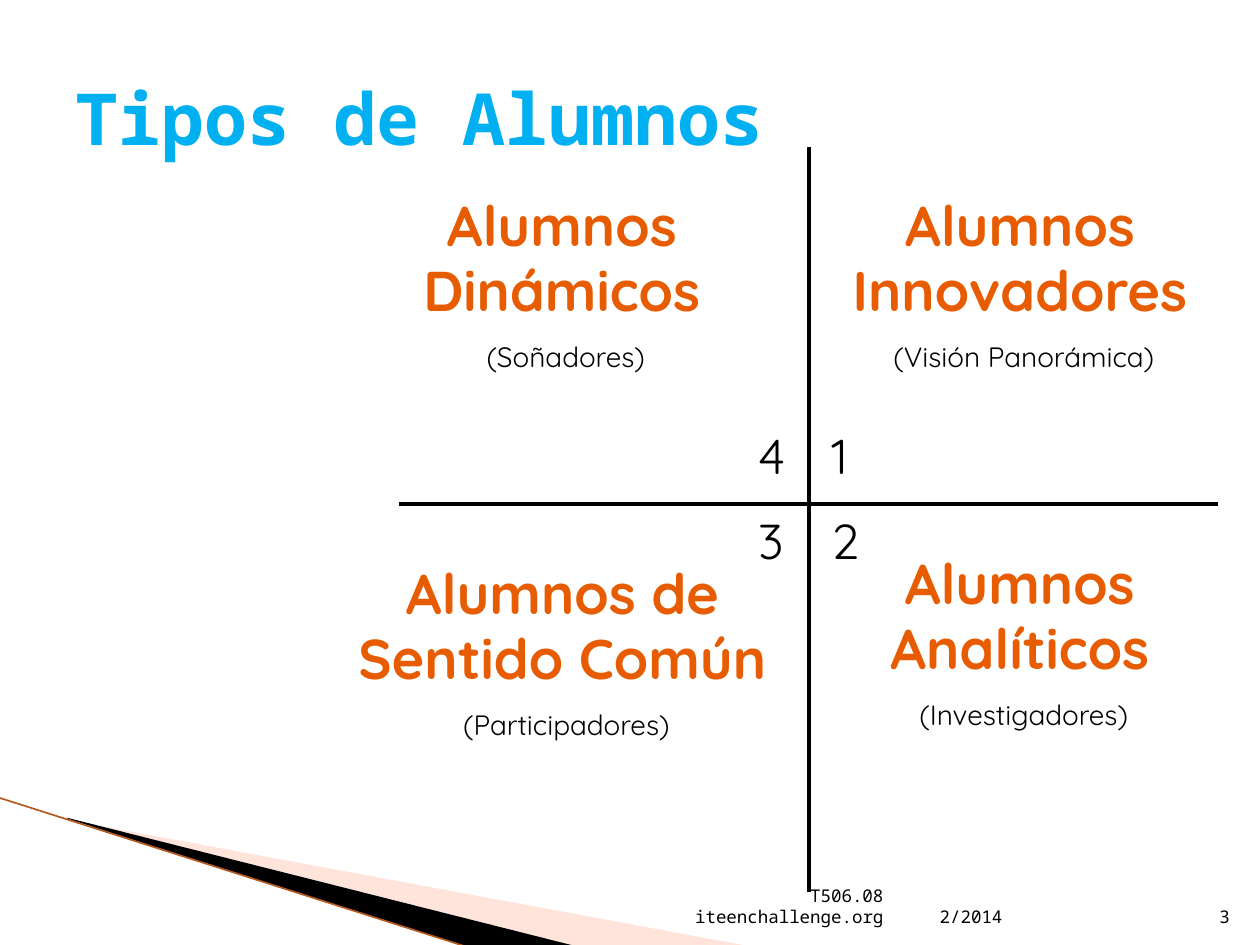
import pptx
import pptx.util
import pptx.dml.color
import pptx.enum.shapes
import pptx.enum.text
import pptx.oxml
import pptx.oxml.ns
from lxml import etree

Pt = pptx.util.Pt
RGB = pptx.dml.color.RGBColor
ALIGN = pptx.enum.text.PP_ALIGN
ANCHOR = pptx.enum.text.MSO_ANCHOR
qn = pptx.oxml.ns.qn

BLACK = RGB(0, 0, 0)
BLUE = RGB(0x00, 0xB0, 0xF0)
ORANGE = RGB(0xE7, 0x5C, 0x01)
PEACH = RGB(0xFF, 0xBC, 0xA5)
RUST = RGB(0xB5, 0x5A, 0x1E)
MONO, SANS = "Noto Sans Mono", "Quicksand"

deck = pptx.Presentation()
deck.slide_width, deck.slide_height = Pt(720), Pt(540)
slide = deck.slides.add_slide(deck.slide_layouts[6])
shapes = slide.shapes


def write(box, text, size, face=SANS, color=BLACK, bold=False, align=ALIGN.LEFT,
          anchor=ANCHOR.TOP, after=0, space=None):
    """Add one paragraph; box is a text frame or (left, top, width, height)."""
    if isinstance(box, tuple):
        frame = shapes.add_textbox(*map(Pt, box)).text_frame
        frame.word_wrap = True
        frame.vertical_anchor = anchor
        para = frame.paragraphs[0]
    else:
        frame = box
        para = frame.add_paragraph()
    para.alignment = align
    para.space_after = Pt(after)
    if space:
        para.line_spacing = space
    run = para.add_run()
    run.text = text
    run.font.name, run.font.size, run.font.bold = face, Pt(size), bold
    run.font.color.rgb = color
    return frame


def rule(start, end, color, width):
    line = shapes.add_connector(pptx.enum.shapes.MSO_CONNECTOR.STRAIGHT,
                                *map(Pt, start + end))
    line.line.color.rgb = color
    line.line.width = Pt(width)
    etree.SubElement(line._element.spPr, qn("a:effectLst"))


# Corner wedges
wedges = [
    (PEACH, 40, [(39.6, 468.7), (428.4, 540.7), (328.3, 540.7), (39.6, 468)]),
    (BLACK, 100, [(38.2, 467.3), (329, 540.7), (267.8, 541.4), (38.9, 468)]),
]
for color, opaque, points in wedges:
    spots = [(Pt(x), Pt(y)) for x, y in points]
    maker = shapes.build_freeform(*spots[0])
    maker.add_line_segments(spots[1:], close=True)
    wedge = maker.convert_to_shape()
    wedge.shadow.inherit = False
    wedge.line.fill.background()
    wedge.fill.solid()
    wedge.fill.fore_color.rgb = color
    if opaque < 100:
        tint = wedge._element.spPr.find(qn("a:solidFill"))[0]
        etree.SubElement(tint, qn("a:alpha"), val=str(opaque * 1000))
rule((-0.7, 455.8), (267.8, 541.4), RUST, 0.95)

write((36, 21.6, 648, 90), "Tipos de Alumnos", 41, face=MONO, color=BLUE,
      bold=True, anchor=ANCHOR.MIDDLE)

# Axes
rule((228.2, 288), (696.2, 288), BLACK, 2)
rule((462.2, 84.2), (462.2, 509.8), BLACK, 2)

# Quadrants
quads = [
    ((473.8, 108, 218.2, 108.7), "Alumnos Innovadores", " (Visión Panorámica)"),
    ((476.6, 312.5, 212.4, 139), "Alumnos Analíticos", " (Investigadores)"),
    ((228.2, 108, 185.8, 108.7), "Alumnos Dinámicos", " (Soñadores)"),
    ((180, 318.2, 283, 138.2), "Alumnos de Sentido Común", " (Participadores)"),
]
for box, name, note in quads:
    frame = write(box, name, 32, color=ORANGE, bold=True, align=ALIGN.CENTER,
                  after=10, space=0.96)
    write(frame, note, 16, align=ALIGN.CENTER, after=10, space=0.96)

for top, row in ((239.8, "41"), (288, "32")):
    for left, digit in zip((426.2, 468), row):
        write((left, top, 31.7, 41.8), digit, 28, after=10)

# Footer
foot = {"face": MONO, "anchor": ANCHOR.BOTTOM}
write((529.9, 504.7, 151.2, 28.8), "2/2014", 10, **foot)
frame = write((344.9, 504.7, 185, 28.8), "T506.08", 10, align=ALIGN.RIGHT, **foot)
frame.paragraphs[0]._p.get_or_add_pPr().set("marR", str(Pt(18)))
write(frame, "iteenchallenge.org", 10, align=ALIGN.RIGHT, **foot)
write((681.1, 504.7, 28.8, 28.8), "3", 10, align=ALIGN.RIGHT, **foot)

deck.save("out.pptx")
